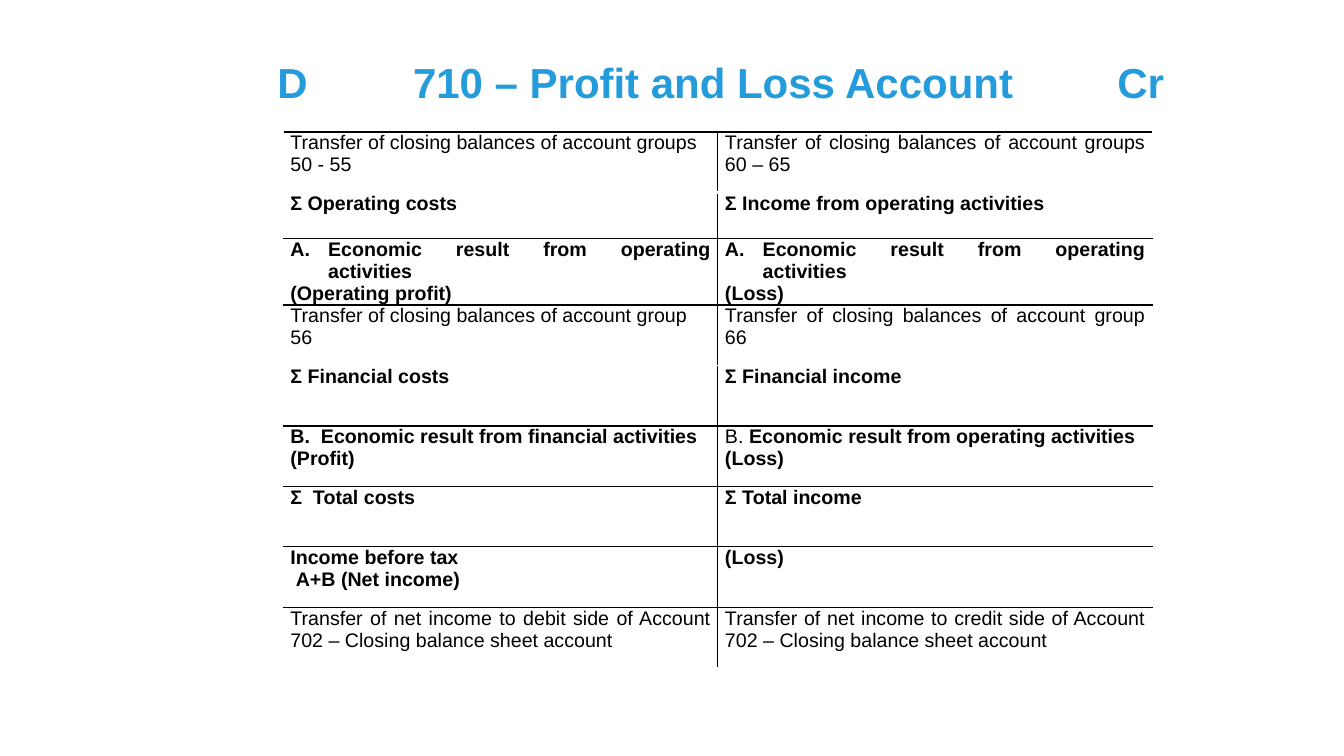
from lxml import etree
from pptx import Presentation, util as u
from pptx.dml.color import RGBColor
from pptx.enum import text
from pptx.oxml import ns

COLORS = {"title": "249CDC", "ink": "000000", "paper": "FFFFFF"}
LEFT, JUSTIFY = text.PP_ALIGN.LEFT, text.PP_ALIGN.JUSTIFY


def add_xml(parent, tag, **attributes):
    return etree.SubElement(parent, ns.qn(tag), {k: str(v) for k, v in attributes.items()})


class AccountSlide:
    """Style and current slide; lengths are percentages of the slide's size."""

    font_name = "Arial"

    def __init__(self, presentation):
        self.width, self.height = presentation.slide_width, presentation.slide_height
        self.slide = presentation.slides.add_slide(presentation.slide_layouts[5])

    def across(self, share):
        return u.Emu(round(self.width * share / 100))

    def down(self, share):
        return u.Emu(round(self.height * share / 100))

    def run(self, paragraph, words, size, color="ink", bold=False):
        run = paragraph.add_run()
        run.text = words
        run.font.name, run.font.size, run.font.bold = self.font_name, u.Pt(size), bold
        run.font.color.rgb = RGBColor.from_string(COLORS[color])

    def tabs(self, paragraph, *shares):
        stops = add_xml(paragraph._p.get_or_add_pPr(), "a:tabLst")
        for share in shares:
            add_xml(stops, "a:tab", pos=self.across(share), algn="l")

    def title(self, words, left, top, width, height, tabs):
        shape = self.slide.shapes.title
        shape.left, shape.top = self.across(left), self.down(top)
        shape.width, shape.height = self.across(width), self.down(height)
        frame = shape.text_frame
        frame.auto_size = text.MSO_AUTO_SIZE.NONE
        frame.word_wrap = True
        frame.vertical_anchor = text.MSO_ANCHOR.MIDDLE
        paragraph = frame.paragraphs[0]
        paragraph.alignment, paragraph.line_spacing = LEFT, 0.9
        self.tabs(paragraph, *tabs)
        self.run(paragraph, words, 30, "title", True)

    def border(self, cell, side, color, width=1):
        line = add_xml(cell._tc.get_or_add_tcPr(), f"a:ln{side}", w=u.Pt(width))
        add_xml(add_xml(line, "a:solidFill"), "a:srgbClr", val=COLORS[color])

    def paragraph(self, paragraph, runs, align=JUSTIFY, numbered=False, tab=None, indent=0):
        paragraph.alignment = align
        properties = paragraph._p.get_or_add_pPr()
        if numbered:
            hang = self.across(2.81)
            properties.set("marL", str(hang))
            properties.set("indent", str(-hang))
            add_xml(properties, "a:buFont", typeface=self.font_name)
            add_xml(properties, "a:buAutoNum", type="alphaUcPeriod")
        elif indent:
            properties.set("marL", str(self.across(indent)))
        if tab:
            self.tabs(paragraph, tab)
        for words, bold in runs:
            self.run(paragraph, words, 14, bold=bold)

    def table(self, rows, left, top, width, heights, rules):
        """Draw a T-account: rules holds the colour of each horizontal edge."""
        frame = self.slide.shapes.add_table(
            len(rows), 2, self.across(left), self.down(top),
            self.across(width), self.down(sum(heights)))
        table = frame.table
        table.first_row = table.horz_banding = False
        for r, (row, height) in enumerate(zip(rows, heights)):
            table.rows[r].height = self.down(height)
            for c, paragraphs in enumerate(row):
                cell = table.cell(r, c)
                cell.margin_left = cell.margin_right = self.across(0.53)
                cell.margin_top = cell.margin_bottom = 0
                self.border(cell, "L", "ink" if c else "paper")
                self.border(cell, "R", "paper" if c else "ink")
                self.border(cell, "T", rules[r])
                self.border(cell, "B", rules[r + 1], 1 if r else 3)
                cell.fill.solid()
                cell.fill.fore_color.rgb = RGBColor.from_string(COLORS["paper"])
                for i, item in enumerate(paragraphs):
                    body = cell.text_frame
                    target = body.add_paragraph() if i else body.paragraphs[0]
                    self.paragraph(target, **item)


def plain(words, **options):
    return {"runs": [(words, False)], **options}


def strong(words, **options):
    return {"runs": [(words, True)], **options}


# Debit and credit cells, each a list of paragraphs
ROWS = [
    ([plain("Transfer of closing balances of account groups 50 - 55", align=LEFT)],
     [plain("Transfer of closing balances of account groups 60 – 65")]),
    ([strong("Σ Operating costs")], [strong("Σ Income from operating activities")]),
    ([strong("Economic result from operating activities", numbered=True),
      strong("(Operating profit)")],
     [strong("Economic result from operating activities", numbered=True),
      strong("(Loss)")]),
    ([plain("Transfer of closing balances of account group"), plain("56")],
     [plain("Transfer of closing balances of account group 66")]),
    ([strong("Σ Financial costs")], [strong("Σ Financial income")]),
    ([strong("B.\tEconomic result from financial activities", tab=2.27),
      strong("(Profit)")],
     [{"runs": [("B. ", False), ("Economic result from operating activities", True)]},
      strong("(Loss)")]),
    ([strong("Σ\tTotal costs", tab=1.68)], [strong("Σ Total income")]),
    ([strong("Income before tax"), strong("A+B (Net income)", indent=0.4)],
     [strong("(Loss)")]),
    ([plain("Transfer of net income to debit side of Account "
            "702 – Closing balance sheet account")],
     [plain("Transfer of net income to credit side of Account "
            "702 – Closing balance sheet account")]),
]


def main():
    presentation = Presentation()
    presentation.slide_width, presentation.slide_height = u.Inches(13.33), u.Inches(7.5)
    account = AccountSlide(presentation)

    # Heading with the debit and credit marks on tab stops
    account.title("D\t710 – Profit and Loss Account\tCr",
                  19.88, 6.27, 73.14, 10, tabs=(10.1, 62.5))

    # Account table: each transfer row runs into its subtotal without a rule
    open_edges = {1, 4, len(ROWS)}
    rules = ["paper" if edge in open_edges else "ink" for edge in range(len(ROWS) + 1)]
    heights = [6.13 if r == 1 else 8 for r in range(len(ROWS))]
    account.table(ROWS, 21.08, 17.47, 64.67, heights, rules)

    presentation.save("out.pptx")


if __name__ == "__main__":
    main()
